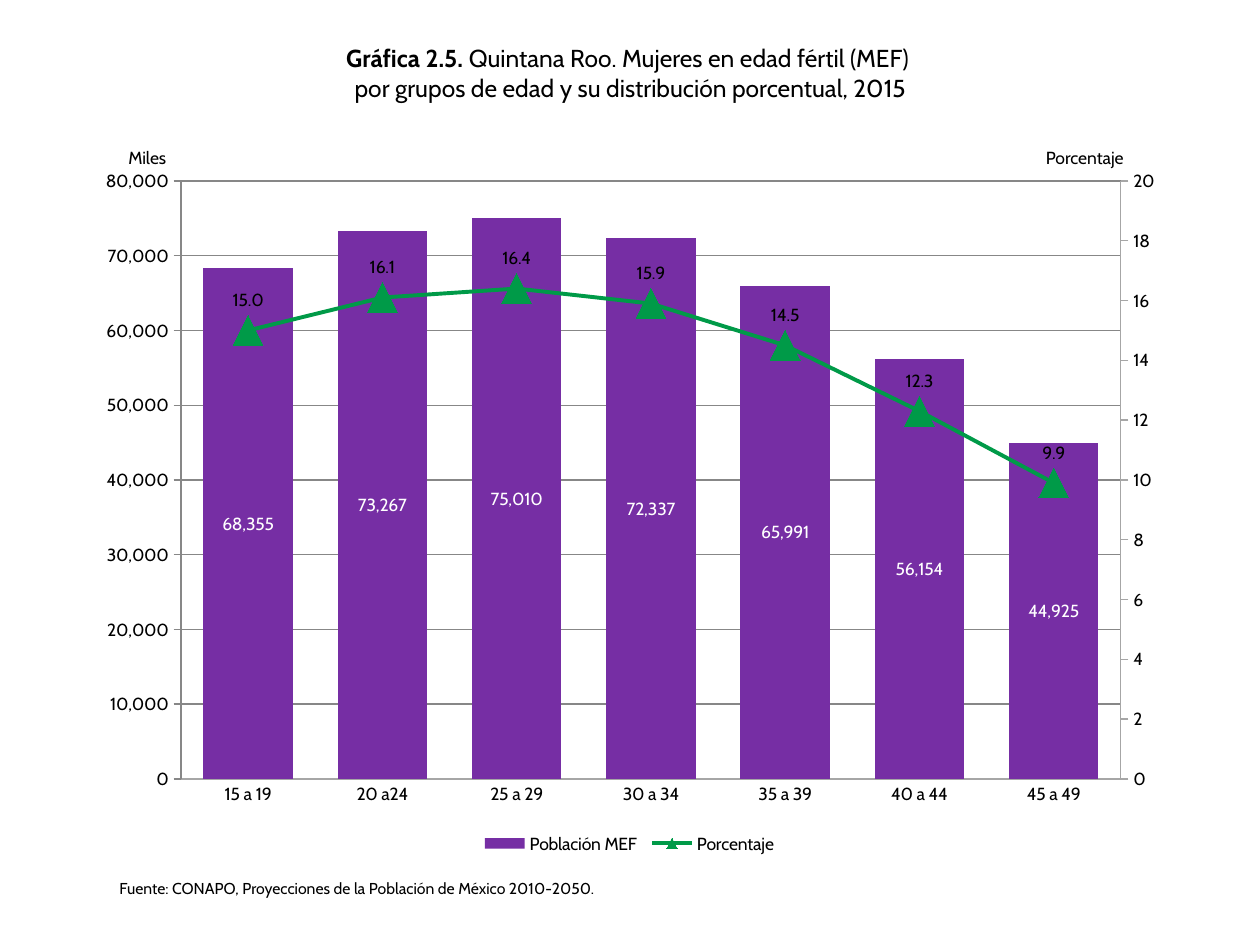
from dataclasses import dataclass

from pptx import Presentation
from pptx.chart.axis import ValueAxis
from pptx.chart.chart import Chart
from pptx.chart.data import CategoryChartData
from pptx.dml.color import RGBColor
from pptx.enum.chart import (XL_CHART_TYPE, XL_LABEL_POSITION, XL_LEGEND_POSITION,
                             XL_MARKER_STYLE, XL_TICK_MARK)
from pptx.enum.dml import MSO_LINE
from pptx.enum.text import MSO_ANCHOR, MSO_AUTO_SIZE, PP_ALIGN
from pptx.oxml import parse_xml
from pptx.oxml.ns import nsdecls, qn
from pptx.slide import Slide
from pptx.util import Emu, Pt

EMU_PER_PX = 914400 / 126


@dataclass(frozen=True)
class Theme:
    font: str = "Cabin"
    text: RGBColor = RGBColor(0x00, 0x00, 0x00)
    inverse: RGBColor = RGBColor(0xFF, 0xFF, 0xFF)
    bar: RGBColor = RGBColor(0x76, 0x2E, 0xA4)
    trend: RGBColor = RGBColor(0x00, 0x9A, 0x48)
    grid: RGBColor = RGBColor(0xA6, 0xA6, 0xA6)
    title_size: int = 14
    body_size: int = 10
    source_size: int = 9


@dataclass(frozen=True)
class Box:
    left: int
    top: int
    width: int
    height: int

    def emu(self) -> tuple[Emu, ...]:
        return tuple(px(n) for n in (self.left, self.top, self.width, self.height))


@dataclass(frozen=True)
class Caption:
    text: str
    box: Box
    size: int
    align: PP_ALIGN = PP_ALIGN.LEFT


THEME = Theme()
TITLE_BOX = Box(35, 37, 1191, 72)
CHART_BOX = Box(84, 156, 1091, 703)
PLOT_BOX = Box(181, 181, 940, 598)
CAPTIONS = (
    Caption("Miles", Box(116, 141, 136, 34), THEME.body_size),
    Caption("Porcentaje", Box(989, 141, 147, 34), THEME.body_size, PP_ALIGN.RIGHT),
    Caption("Fuente: CONAPO, Proyecciones de la Población de México 2010-2050.",
            Box(107, 873, 979, 32), THEME.source_size),
)
AGE_GROUPS = ("15 a 19", "20 a24", "25 a 29", "30 a 34", "35 a 39", "40 a 44", "45 a 49")
POPULATION = (68355, 73267, 75010, 72337, 65991, 56154, 44925)
PERCENTAGE = (15.0, 16.1, 16.4, 15.9, 14.5, 12.3, 9.9)


def px(length: int) -> Emu:
    return Emu(round(length * EMU_PER_PX))


def style_font(font, size: int, color: RGBColor = THEME.text, bold: bool = False) -> None:
    font.name, font.size, font.bold = THEME.font, Pt(size), bold
    font.color.rgb = color


def style_line(line, color: RGBColor, width: float) -> None:
    line.color.rgb = color
    line.width = Pt(width)


def add_title(slide: Slide) -> None:
    title = slide.shapes.title
    title.left, title.top, title.width, title.height = TITLE_BOX.emu()
    frame = title.text_frame
    frame.vertical_anchor = MSO_ANCHOR.TOP
    frame.auto_size = MSO_AUTO_SIZE.SHAPE_TO_FIT_TEXT
    paragraph = frame.paragraphs[0]
    paragraph.text = "Gráfica 2.5. "
    paragraph.alignment = PP_ALIGN.CENTER
    paragraph.add_run().text = "Quintana Roo. Mujeres en edad fértil (MEF) "
    paragraph.add_line_break()
    paragraph.add_run().text = "por grupos de edad y su distribución porcentual, 2015"
    for index, run in enumerate(paragraph.runs):
        style_font(run.font, THEME.title_size, bold=index == 0)


def add_caption(slide: Slide, caption: Caption) -> None:
    frame = slide.shapes.add_textbox(*caption.box.emu()).text_frame
    frame.word_wrap = True
    frame.auto_size = MSO_AUTO_SIZE.SHAPE_TO_FIT_TEXT
    frame.text = caption.text
    paragraph = frame.paragraphs[0]
    paragraph.alignment = caption.align
    style_font(paragraph.runs[0].font, caption.size)


def move_percentage_to_right_axis(chart: Chart) -> ValueAxis:
    """Turn the second series into a line with its own value axis."""
    plot_area = chart.element.find(".//" + qn("c:plotArea"))
    bar_chart = plot_area.find(qn("c:barChart"))
    series = bar_chart.findall(qn("c:ser"))[1]
    for bar_only in series.findall(qn("c:invertIfNegative")):
        series.remove(bar_only)
    line_chart = parse_xml(
        f'<c:lineChart {nsdecls("c")}><c:grouping val="stacked"/><c:varyColors val="0"/>'
        '<c:marker val="1"/><c:axId val="5001"/><c:axId val="5002"/></c:lineChart>')
    line_chart.insert(2, series)
    bar_chart.addnext(line_chart)

    category_axis = parse_xml(
        f'<c:catAx {nsdecls("c")}><c:axId val="5001"/><c:scaling/><c:delete val="1"/>'
        '<c:axPos val="b"/><c:crossAx val="5002"/></c:catAx>')
    right_axis = parse_xml(
        f'<c:valAx {nsdecls("c")}><c:axId val="5002"/><c:scaling/><c:delete val="0"/>'
        '<c:axPos val="r"/><c:crossAx val="5001"/><c:crosses val="max"/></c:valAx>')
    left_axis = plot_area.find(qn("c:valAx"))
    left_axis.addnext(category_axis)
    category_axis.addnext(right_axis)
    return ValueAxis(right_axis)


def frame_plot_area(chart: Chart) -> None:
    """Fix the inner plot area and outline it."""
    plot_area = chart.element.find(".//" + qn("c:plotArea"))
    for old_layout in plot_area.findall(qn("c:layout")):
        plot_area.remove(old_layout)
    fractions = {
        "x": (PLOT_BOX.left - CHART_BOX.left) / CHART_BOX.width,
        "y": (PLOT_BOX.top - CHART_BOX.top) / CHART_BOX.height,
        "w": PLOT_BOX.width / CHART_BOX.width,
        "h": PLOT_BOX.height / CHART_BOX.height,
    }
    modes = '<c:xMode val="edge"/><c:yMode val="edge"/>'
    sizes = "".join(f'<c:{key} val="{value:.4f}"/>' for key, value in fractions.items())
    plot_area.insert(0, parse_xml(
        f'<c:layout {nsdecls("c")}><c:manualLayout><c:layoutTarget val="inner"/>'
        f'{modes}{sizes}</c:manualLayout></c:layout>'))
    plot_area.append(parse_xml(
        f'<c:spPr {nsdecls("c", "a")}><a:noFill/><a:ln w="9525"><a:solidFill>'
        f'<a:srgbClr val="{THEME.grid}"/></a:solidFill></a:ln></c:spPr>'))


def style_value_axis(axis: ValueAxis, maximum: int, step: int, tick: XL_TICK_MARK) -> None:
    axis.minimum_scale, axis.maximum_scale, axis.major_unit = 0, maximum, step
    axis.major_tick_mark, axis.minor_tick_mark = tick, XL_TICK_MARK.NONE
    axis.tick_labels.number_format = "#,##0"
    axis.tick_labels.number_format_is_linked = False
    style_font(axis.tick_labels.font, THEME.body_size)


def add_labels(series, position: XL_LABEL_POSITION, number_format: str, color: RGBColor) -> None:
    labels = series.data_labels
    labels.show_value = True
    labels.position = position
    labels.number_format = number_format
    labels.number_format_is_linked = False
    style_font(labels.font, THEME.body_size, color)


def add_population_chart(slide: Slide) -> None:
    data = CategoryChartData()
    data.categories = AGE_GROUPS
    data.add_series("Población MEF ", POPULATION, "#,##0")
    data.add_series("Porcentaje", PERCENTAGE, "#,##0.0")
    chart = slide.shapes.add_chart(XL_CHART_TYPE.COLUMN_CLUSTERED, *CHART_BOX.emu(), data).chart
    style_font(chart.font, THEME.body_size)
    chart.has_title = False
    chart.has_legend = True
    chart.legend.position = XL_LEGEND_POSITION.BOTTOM
    chart.legend.include_in_layout = False

    # Axes
    right_axis = move_percentage_to_right_axis(chart)
    frame_plot_area(chart)
    style_value_axis(chart.value_axis, 90000, 10000, XL_TICK_MARK.CROSS)
    style_value_axis(right_axis, 20, 2, XL_TICK_MARK.OUTSIDE)
    right_axis.format.line.fill.background()
    gridline = chart.value_axis.major_gridlines.format.line
    for line in (chart.value_axis.format.line, chart.category_axis.format.line, gridline):
        style_line(line, THEME.grid, 0.75)
    gridline.dash_style = MSO_LINE.DASH
    chart.category_axis.major_tick_mark = XL_TICK_MARK.NONE

    # Population bars
    bars, trend = chart.plots
    bars.gap_width, bars.overlap, bars.vary_by_categories = 50, -25, False
    population = bars.series[0]
    population.format.fill.solid()
    population.format.fill.fore_color.rgb = THEME.bar
    add_labels(population, XL_LABEL_POSITION.CENTER, "#,##0", THEME.inverse)

    # Percentage line
    percentage = trend.series[0]
    percentage.smooth = False
    style_line(percentage.format.line, THEME.trend, 2.25)
    marker = percentage.marker
    marker.style, marker.size = XL_MARKER_STYLE.TRIANGLE, 17
    marker.format.fill.solid()
    marker.format.fill.fore_color.rgb = THEME.trend
    style_line(marker.format.line, THEME.trend, 0.75)
    add_labels(percentage, XL_LABEL_POSITION.ABOVE, "#,##0.0", THEME.text)


def main() -> None:
    presentation = Presentation()
    presentation.slide_width, presentation.slide_height = px(1260), px(945)
    slide = presentation.slides.add_slide(presentation.slide_layouts[5])
    add_population_chart(slide)
    for caption in CAPTIONS:
        add_caption(slide, caption)
    add_title(slide)
    presentation.save("out.pptx")


if __name__ == "__main__":
    main()
